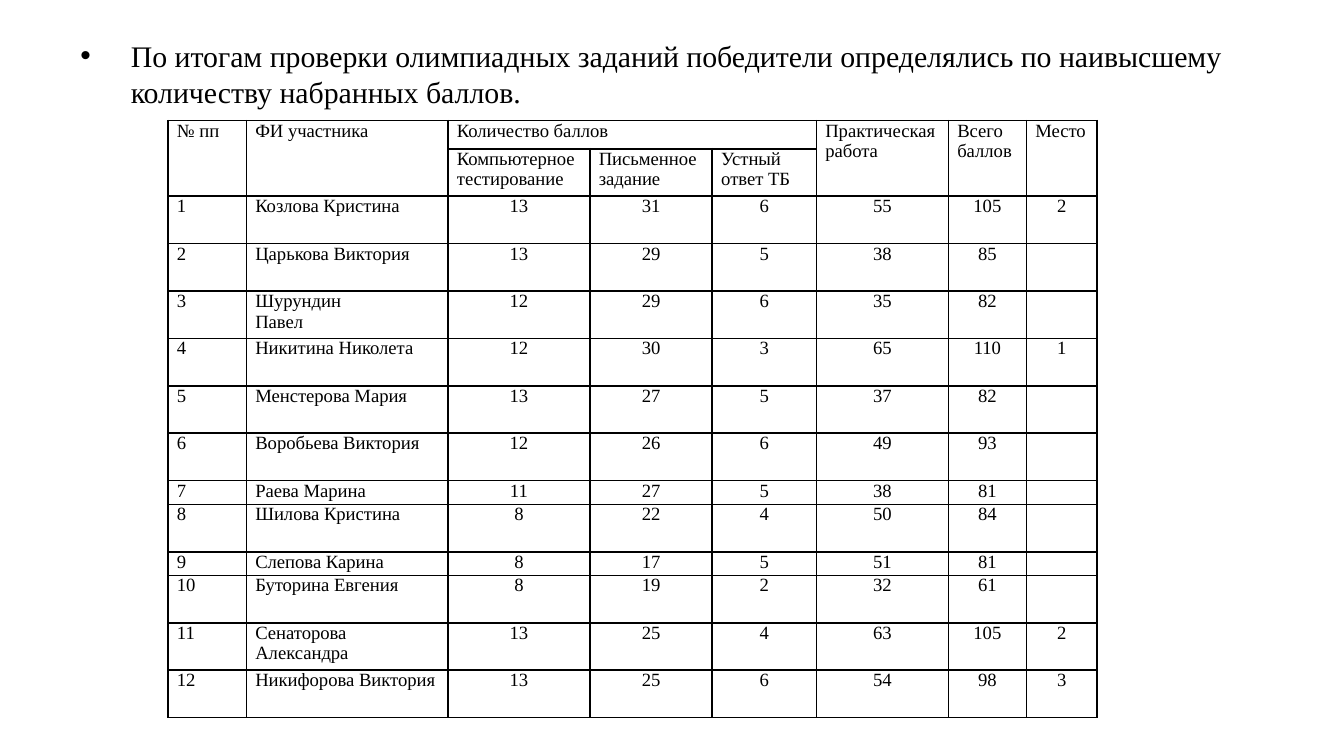
from dataclasses import dataclass
from typing import Optional

from lxml.etree import SubElement
from pptx import Presentation
from pptx.dml.color import RGBColor
from pptx.enum.text import PP_ALIGN
from pptx.oxml.ns import qn
from pptx.util import Pt

COLORS = {"text": "000000", "border": "000000", "cell": "FFFFFF"}
FONT = "Times New Roman"
INTRO = (
    "По итогам проверки олимпиадных заданий победители определялись "
    "по наивысшему количеству набранных баллов."
)
COLUMN_WIDTHS = [42, 108, 76, 65.6, 55.8, 70.7, 41.8, 38]
HEADER_HEIGHT, TALL_ROW, SHORT_ROW = 15.1, 25.4, 12.7


@dataclass
class Heading:
    text: str
    row: int
    column: int
    last_row: int
    last_column: int


@dataclass
class Participant:
    name: str
    scores: tuple[int, int, int, int]
    place: Optional[int] = None
    height: float = TALL_ROW


HEADINGS = [
    Heading("№ пп", 0, 0, 1, 0),
    Heading("ФИ участника", 0, 1, 1, 1),
    Heading("Количество баллов", 0, 2, 0, 4),
    Heading("Компьютерное тестирование", 1, 2, 1, 2),
    Heading("Письменное задание", 1, 3, 1, 3),
    Heading("Устный ответ ТБ", 1, 4, 1, 4),
    Heading("Практическая работа", 0, 5, 1, 5),
    Heading("Всего баллов", 0, 6, 1, 6),
    Heading("Место", 0, 7, 1, 7),
]
PARTICIPANTS = [
    Participant("Козлова Кристина", (13, 31, 6, 55), 2),
    Participant("Царькова Виктория", (13, 29, 5, 38)),
    Participant("Шурундин\nПавел", (12, 29, 6, 35)),
    Participant("Никитина Николета", (12, 30, 3, 65), 1),
    Participant("Менстерова Мария", (13, 27, 5, 37)),
    Participant("Воробьева Виктория", (12, 26, 6, 49)),
    Participant("Раева Марина", (11, 27, 5, 38), height=SHORT_ROW),
    Participant("Шилова Кристина", (8, 22, 4, 50)),
    Participant("Слепова Карина", (8, 17, 5, 51), height=SHORT_ROW),
    Participant("Буторина Евгения", (8, 19, 2, 32)),
    Participant("Сенаторова Александра", (13, 25, 4, 63), 2),
    Participant("Никифорова Виктория", (13, 25, 6, 54), 3),
]


def format_spans(paragraph, size: float) -> None:
    for span in paragraph.runs:
        span.font.name = FONT
        span.font.size = Pt(size)
        span.font.color.rgb = RGBColor.from_string(COLORS["text"])


def draw_intro(page) -> None:
    box = page.shapes.add_textbox(Pt(36), Pt(16.6), Pt(648), Pt(345.6))
    box.text_frame.word_wrap = True
    box.text_frame.text = INTRO
    para = box.text_frame.paragraphs[0]
    properties = para._p.get_or_add_pPr()
    properties.set("marL", str(Pt(27)))
    properties.set("indent", str(-Pt(27)))
    SubElement(properties, qn("a:buFont"), typeface="Arial")
    SubElement(properties, qn("a:buChar"), char="•")
    format_spans(para, 16)


def style_cell(cell) -> None:
    cell.margin_left = cell.margin_right = Pt(4.8)
    cell.margin_top = cell.margin_bottom = Pt(0)
    properties = cell._tc.get_or_add_tcPr()
    for side in ("lnL", "lnR", "lnT", "lnB"):
        line = SubElement(properties, qn(f"a:{side}"), w=str(Pt(1)))
        fill = SubElement(line, qn("a:solidFill"))
        SubElement(fill, qn("a:srgbClr"), val=COLORS["border"])
    cell.fill.solid()
    cell.fill.fore_color.rgb = RGBColor.from_string(COLORS["cell"])


def write_cell(cell, text: str, alignment: PP_ALIGN) -> None:
    cell.text_frame.text = text
    for para in cell.text_frame.paragraphs:
        para.alignment = alignment
        format_spans(para, 10)
        if not para.runs:
            SubElement(para._p, qn("a:endParaRPr"), sz="1000")


def draw_results(page) -> None:
    heights = [HEADER_HEIGHT, TALL_ROW] + [person.height for person in PARTICIPANTS]
    frame = page.shapes.add_table(
        len(heights), len(COLUMN_WIDTHS), Pt(90), Pt(64.6),
        Pt(sum(COLUMN_WIDTHS)), Pt(sum(heights)),
    )
    table = frame.table
    table.first_row = table.horz_banding = False
    for column, width in zip(table.columns, COLUMN_WIDTHS):
        column.width = Pt(width)
    for row, height in zip(table.rows, heights):
        row.height = Pt(height)
    for cell in table.iter_cells():
        style_cell(cell)
        write_cell(cell, "", PP_ALIGN.LEFT)

    for heading in HEADINGS:
        cell = table.cell(heading.row, heading.column)
        last = table.cell(heading.last_row, heading.last_column)
        if cell != last:
            cell.merge(last)
        write_cell(cell, heading.text, PP_ALIGN.JUSTIFY)

    for number, person in enumerate(PARTICIPANTS, start=1):
        values = [number, person.name, *person.scores, sum(person.scores), person.place or ""]
        for column, value in enumerate(values):
            alignment = PP_ALIGN.JUSTIFY if column < 2 else PP_ALIGN.CENTER
            write_cell(table.cell(number + 1, column), str(value), alignment)


def main() -> None:
    deck = Presentation()
    deck.slide_width, deck.slide_height = Pt(720), Pt(405)
    page = deck.slides.add_slide(deck.slide_layouts[6])
    draw_intro(page)
    draw_results(page)
    deck.save("out.pptx")


if __name__ == "__main__":
    main()
